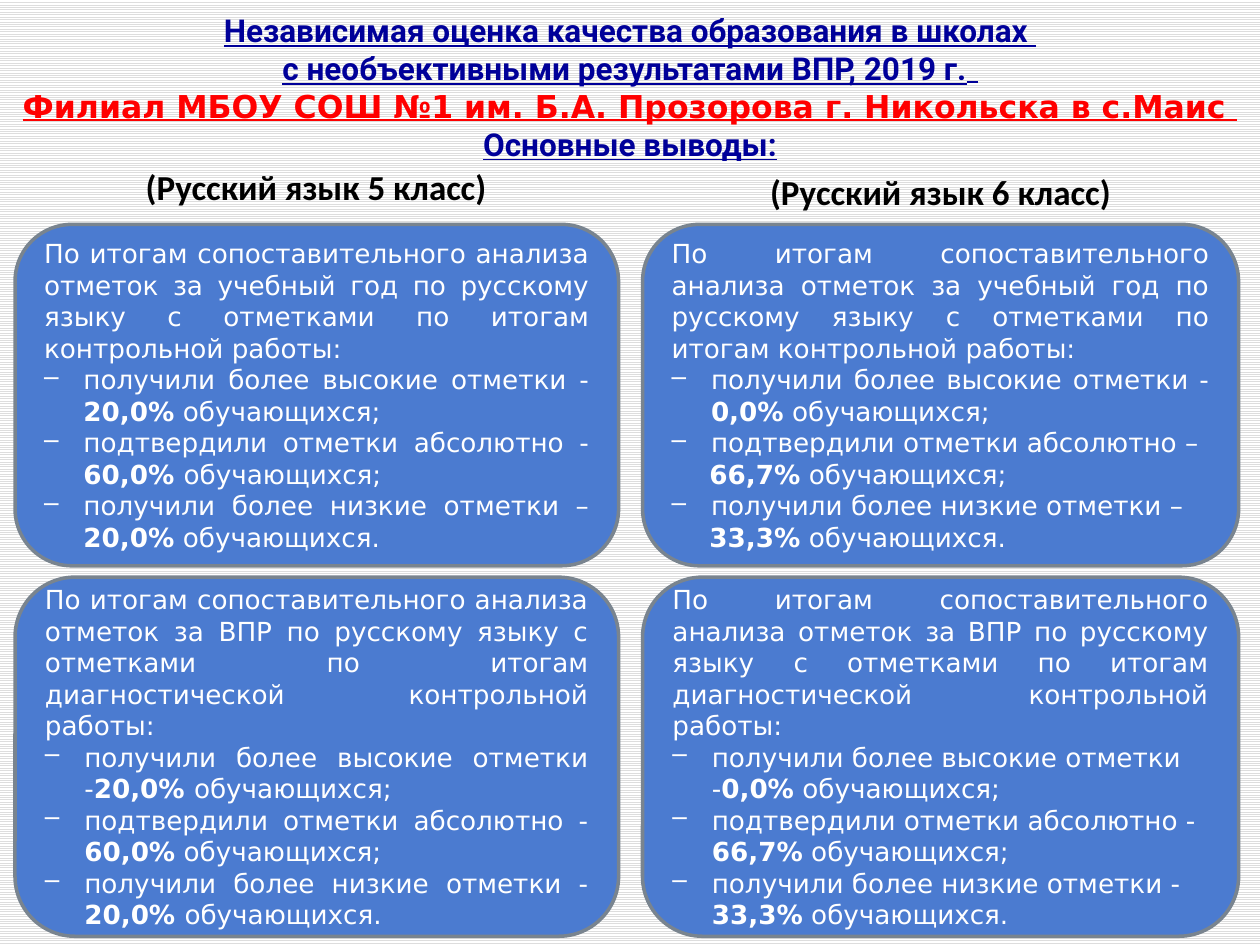
from copy import deepcopy

from pptx import Presentation
from pptx.dml.color import RGBColor
from pptx.enum.dml import MSO_PATTERN
from pptx.enum.shapes import MSO_SHAPE
from pptx.enum.text import MSO_ANCHOR, MSO_AUTO_SIZE, PP_ALIGN
from pptx.oxml import parse_xml
from pptx.oxml.ns import nsdecls, qn
from pptx.util import Pt


def color(value):
    return RGBColor.from_string(value)


def add_span(para, text, fill, **formats):
    span = para.add_run()
    span.text = text
    for name, value in formats.items():
        setattr(span.font, name, value)
    span.font.color.rgb = color(fill)
    return span


deck = Presentation()
deck.slide_width, deck.slide_height = Pt(720), Pt(540)
page = deck.slides.add_slide(deck.slide_layouts[5])

# Lined background
background = page.background.fill
background.patterned()
background.pattern = MSO_PATTERN.LIGHT_HORIZONTAL
background.fore_color.rgb = color("DDDDDD")
background.back_color.rgb = color("FFFFFF")

# Title: one paragraph with line breaks
title = page.shapes.title
title.left, title.top, title.width, title.height = Pt(0), Pt(-13.7), Pt(720), Pt(110.2)
title.text_frame.auto_size = MSO_AUTO_SIZE.NONE
title.text_frame.word_wrap = True
title.text_frame.vertical_anchor = MSO_ANCHOR.BOTTOM
para = title.text_frame.paragraphs[0]
para.alignment = PP_ALIGN.CENTER
TITLE_SPANS = [
    ("Независимая оценка качества образования в школах ", "Roboto", "000099", True),
    ("с необъективными результатами ВПР, 2019 г.", "Roboto", "000099", False),
    (" ", "DejaVu Sans", "000099", True),
    ("Филиал МБОУ СОШ №1 им. Б.А. Прозорова г. Никольска в с.Маис ", "DejaVu Sans", "FF0000", True),
    ("Основные выводы:", "Roboto", "000099", False),
]
for text, font_name, fill, breaks in TITLE_SPANS:
    span = add_span(para, text, fill, name=font_name, size=Pt(18), bold=True, underline=True)
    if breaks:
        para.add_line_break()
        # The break takes the text size of the span before it
        para._p.findall(qn("a:br"))[-1].append(deepcopy(span._r.rPr))

# Column headings
HEADINGS = [
    ("(Русский язык 5 класс)", 73.4, 83.5, 214.6, 49),
    ("(Русский язык 6 класс)", 432.7, 89.3, 209.5, 43.2),
]
for text, left, top, width, height in HEADINGS:
    box = page.shapes.add_textbox(Pt(left), Pt(top), Pt(width), Pt(height))
    box.text_frame.word_wrap = True
    box.text_frame.vertical_anchor = MSO_ANCHOR.MIDDLE
    para = box.text_frame.paragraphs[0]
    para.alignment = PP_ALIGN.CENTER
    para.line_spacing = 0.9
    add_span(para, text, "000000", name="Calibri", size=Pt(20), bold=True)

# Panels: text between bars is bold, a leading bar means no bullet
YEAR_INTRO = (
    "По итогам сопоставительного анализа отметок за учебный год по русскому языку "
    "с отметками по итогам контрольной работы:"
)
TEST_INTRO = (
    "По итогам сопоставительного анализа отметок за ВПР по русскому языку "
    "с отметками по итогам диагностической контрольной работы:"
)
COLUMNS = [(8.6, 344.9), (367.2, 340.6)]
ROWS = [(128.2, 195.1), (329.8, 205.2)]
PANELS = [
    (0, 0, YEAR_INTRO, PP_ALIGN.JUSTIFY, [
        "получили более высокие отметки - |20,0%| обучающихся;",
        "подтвердили отметки абсолютно - |60,0% |обучающихся;",
        "получили более низкие отметки – |20,0%| обучающихся.",
    ]),
    (0, 1, TEST_INTRO, PP_ALIGN.JUSTIFY, [
        "получили более высокие отметки -|20,0% |обучающихся;",
        "подтвердили отметки абсолютно - |60,0%| обучающихся;",
        "получили более низкие отметки - |20,0% |обучающихся.",
    ]),
    (1, 0, YEAR_INTRO, PP_ALIGN.JUSTIFY, [
        "получили более высокие отметки - |0,0%| обучающихся;",
        "подтвердили отметки абсолютно – ",
        "|66,7%| обучающихся;",
        "получили более низкие отметки – ",
        "|33,3%| обучающихся.",
    ]),
    (1, 1, TEST_INTRO, PP_ALIGN.LEFT, [
        "получили более высокие отметки -|0,0%| обучающихся;",
        "подтвердили отметки абсолютно - |66,7%| обучающихся;",
        "получили более низкие отметки - |33,3%| обучающихся.",
    ]),
]
body_font = {"name": "DejaVu Sans", "size": Pt(15)}
for column, row, intro, item_alignment, items in PANELS:
    left, width = COLUMNS[column]
    top, height = ROWS[row]
    panel = page.shapes.add_shape(
        MSO_SHAPE.ROUNDED_RECTANGLE, Pt(left), Pt(top), Pt(width), Pt(height))
    panel.shadow.inherit = False
    panel.fill.solid()
    panel.fill.fore_color.rgb = color("4B7BD0")
    panel.line.color.rgb = color("79848F")
    panel.line.width = Pt(2)
    frame = panel.text_frame
    frame.word_wrap = True
    frame.vertical_anchor = MSO_ANCHOR.MIDDLE

    para = frame.paragraphs[0]
    para.alignment = PP_ALIGN.JUSTIFY
    add_span(para, intro, "FFFFFF", bold=False, **body_font)

    for item in items:
        para = frame.add_paragraph()
        para.alignment = item_alignment
        properties = para._p.get_or_add_pPr()
        if item.startswith("|"):
            properties.set("marL", str(Pt(21.6)))
        else:
            properties.set("marL", str(Pt(22.5)))
            properties.set("indent", str(Pt(-22.5)))
            properties.append(parse_xml(f'<a:buChar {nsdecls("a")} char="–"/>'))
        for index, text in enumerate(item.split("|")):
            if text:
                add_span(para, text, "FFFFFF", bold=index == 1, **body_font)

deck.save("out.pptx")
